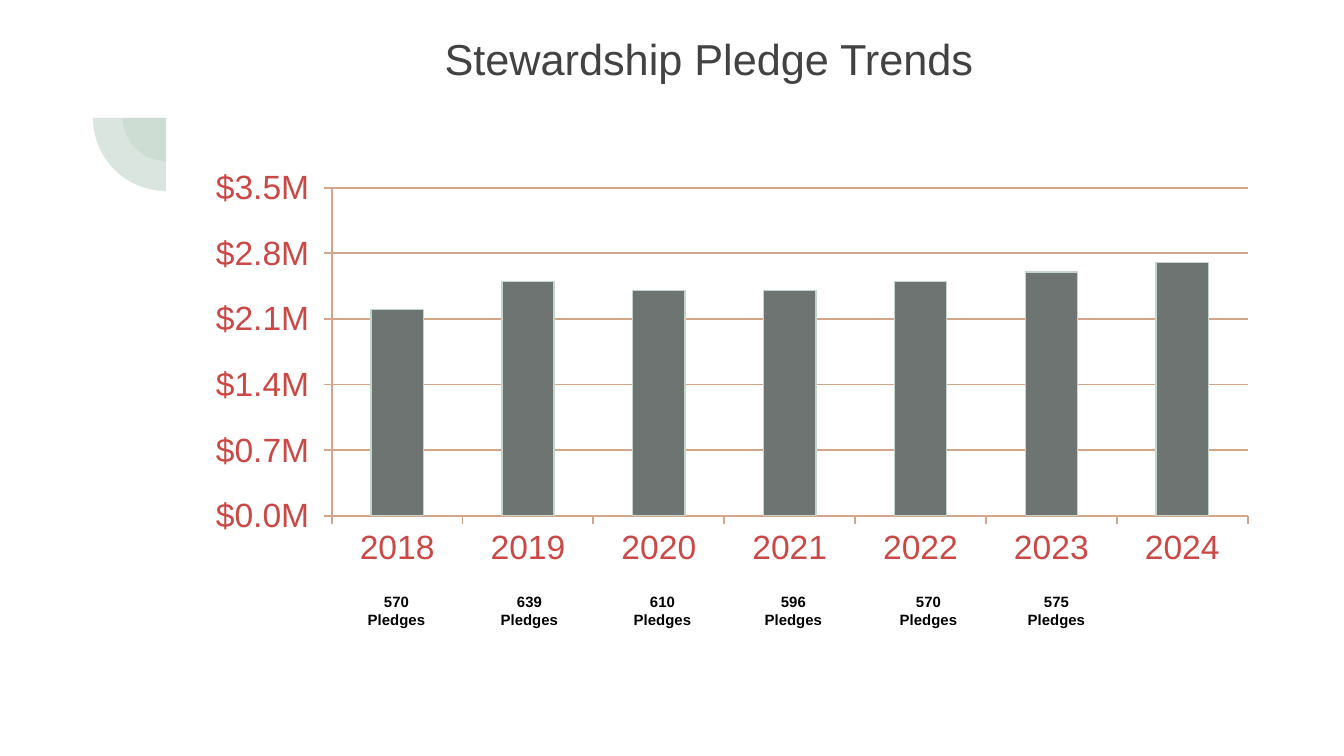
"""Build the Stewardship Pledge Trends slide."""
import math

from lxml import etree
from pptx import Presentation
from pptx import util as u
from pptx.chart.data import CategoryChartData
from pptx.dml.color import RGBColor
from pptx.enum import chart as c
from pptx.enum import text
from pptx.oxml import parse_xml
from pptx.oxml.ns import nsdecls, qn

PX = 914400 / 134.4
COLORS = {
    "title": "424242", "ornament": "C9DBD1", "bar": "6D7472", "bar_edge": "C4D6CC",
    "axis": "D2A789", "axis_text": "CA4946", "label": "000000",
}
PLEDGES = {360: "570", 493: "639", 626: "610", 757: "596", 892: "570", 1020: "575"}


def px(*lengths):
    return [round(length * PX) for length in lengths]


def style_font(font, size, color, bold=False):
    font.name = "Arial"
    font.size = u.Pt(size)
    font.bold = bold
    font.color.rgb = RGBColor.from_string(COLORS[color])


presentation = Presentation()
presentation.slide_width, presentation.slide_height = px(1344, 756)
slide = presentation.slides.add_slide(presentation.slide_layouts[5])

for radius in (43, 73):
    angles = [math.radians(90 + 3 * step) for step in range(31)]
    arc = [px(166 + radius * math.cos(a), 118 + radius * math.sin(a)) for a in angles]
    builder = slide.shapes.build_freeform(*px(166, 118))
    builder.add_line_segments(arc, close=True)
    quarter = builder.convert_to_shape()
    quarter.name = f"Quarter circle {radius}"
    quarter.shadow.inherit = False
    quarter.line.fill.background()
    quarter.fill.solid()
    quarter.fill.fore_color.rgb = RGBColor.from_string(COLORS["ornament"])
    color = quarter.fill._xPr.find(".//" + qn("a:srgbClr"))
    etree.SubElement(color, qn("a:alpha"), val="70000")

title = slide.shapes.title
title.left, title.top, title.width, title.height = px(192, 19, 1034, 146)
frame = title.text_frame
frame.word_wrap = True
frame.auto_size = text.MSO_AUTO_SIZE.NONE
frame.vertical_anchor = text.MSO_ANCHOR.TOP
frame.margin_left, frame.margin_right, frame.margin_top, frame.margin_bottom = px(13, 13, 13, 13)
paragraph = frame.paragraphs[0]
paragraph.alignment = text.PP_ALIGN.CENTER
run = paragraph.add_run()
run.text = "Stewardship Pledge Trends"
style_font(run.font, 23.2, "title")

data = CategoryChartData()
data.categories = [str(year) for year in range(2018, 2025)]
data.add_series("Series 1", [2.2, 2.5, 2.4, 2.4, 2.5, 2.6, 2.7])
chart = slide.shapes.add_chart(
    c.XL_CHART_TYPE.COLUMN_CLUSTERED, *px(205, 147, 1048, 434), data).chart
chart.has_legend = False
chart.has_title = False
style_font(chart.font, 10, "ornament")

plot = chart.plots[0]
plot.gap_width = 150
plot.vary_by_categories = False
series = plot.series[0]
series.format.fill.solid()
series.format.fill.fore_color.rgb = RGBColor.from_string(COLORS["bar"])
series.format.line.color.rgb = RGBColor.from_string(COLORS["bar_edge"])
series.format.line.width = u.Pt(0.75)

values = chart.value_axis
values.minimum_scale, values.maximum_scale, values.major_unit = 0, 3.5, 0.7
values.has_major_gridlines = True
values.tick_labels.number_format = r'"$"0.0"M"_);\("$"0.0\)"M"'
values.tick_labels.number_format_is_linked = False
chart.category_axis.tick_label_position = c.XL_TICK_LABEL_POSITION.LOW
for axis in (chart.category_axis, values):
    axis.major_tick_mark = c.XL_TICK_MARK.OUTSIDE
    axis.minor_tick_mark = c.XL_TICK_MARK.NONE
    style_font(axis.tick_labels.font, 18, "axis_text")
for line in (chart.category_axis.format.line, values.format.line,
             values.major_gridlines.format.line):
    line.color.rgb = RGBColor.from_string(COLORS["axis"])
    line.width = u.Pt(1)

plot_area = chart._chartSpace.find(".//" + qn("c:plotArea"))
for old_layout in plot_area.findall(qn("c:layout")):
    plot_area.remove(old_layout)
plot_area.insert(0, parse_xml(
    f'<c:layout {nsdecls("c")}><c:manualLayout><c:layoutTarget val="inner"/>'
    '<c:xMode val="edge"/><c:yMode val="edge"/><c:x val="0.121"/><c:y val="0.094"/>'
    '<c:w val="0.874"/><c:h val="0.756"/></c:manualLayout></c:layout>'))

for left, count in PLEDGES.items():
    label = slide.shapes.add_textbox(*px(left, 586, 73, 51))
    frame = label.text_frame
    frame.word_wrap = False
    frame.auto_size = text.MSO_AUTO_SIZE.SHAPE_TO_FIT_TEXT
    frame.margin_left, frame.margin_right, frame.margin_top, frame.margin_bottom = px(7, 7, 7, 7)
    for paragraph, words in ((frame.paragraphs[0], count), (frame.add_paragraph(), "Pledges")):
        paragraph.alignment = text.PP_ALIGN.CENTER
        run = paragraph.add_run()
        run.text = words
        style_font(run.font, 8, "label", bold=True)

presentation.save("out.pptx")
